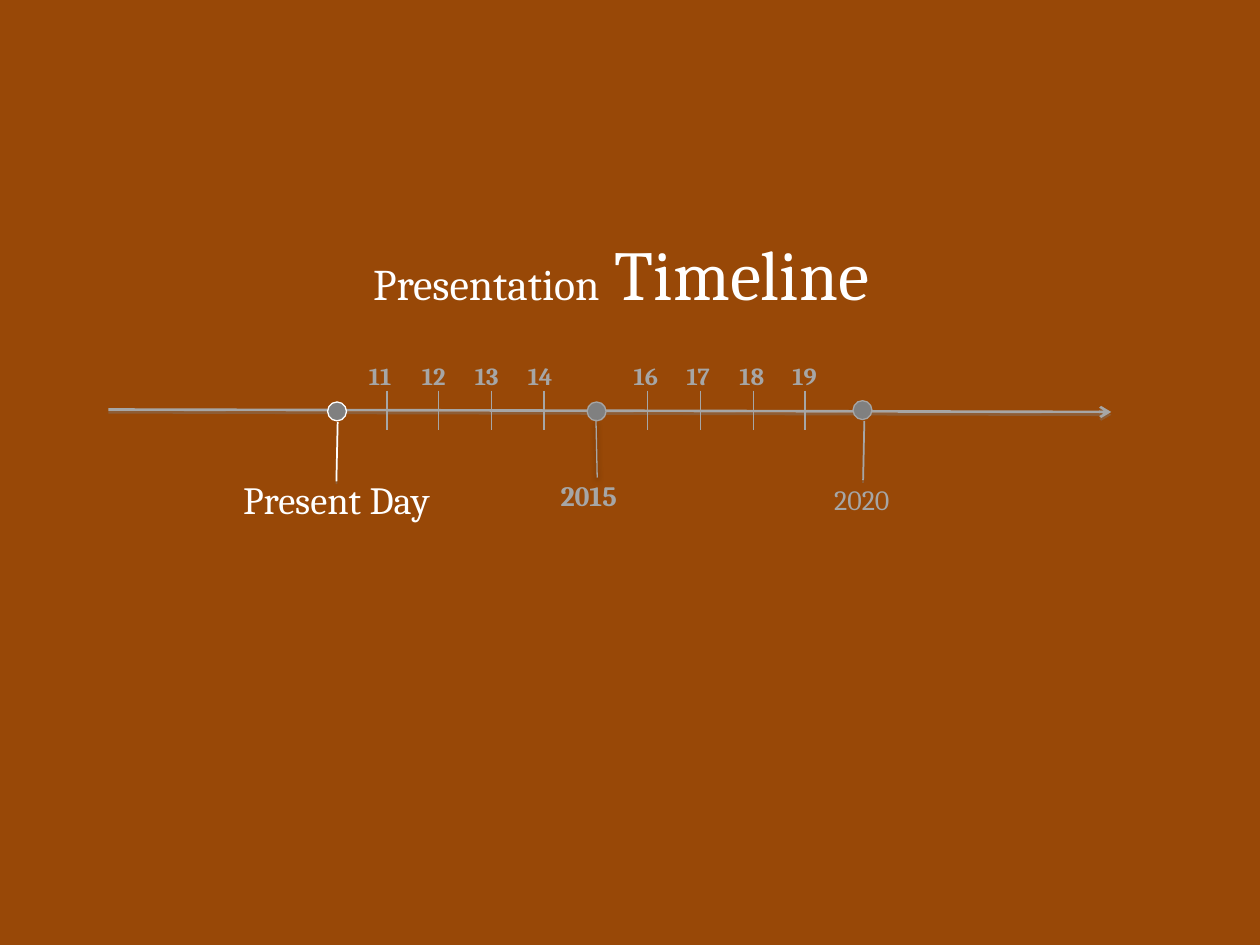
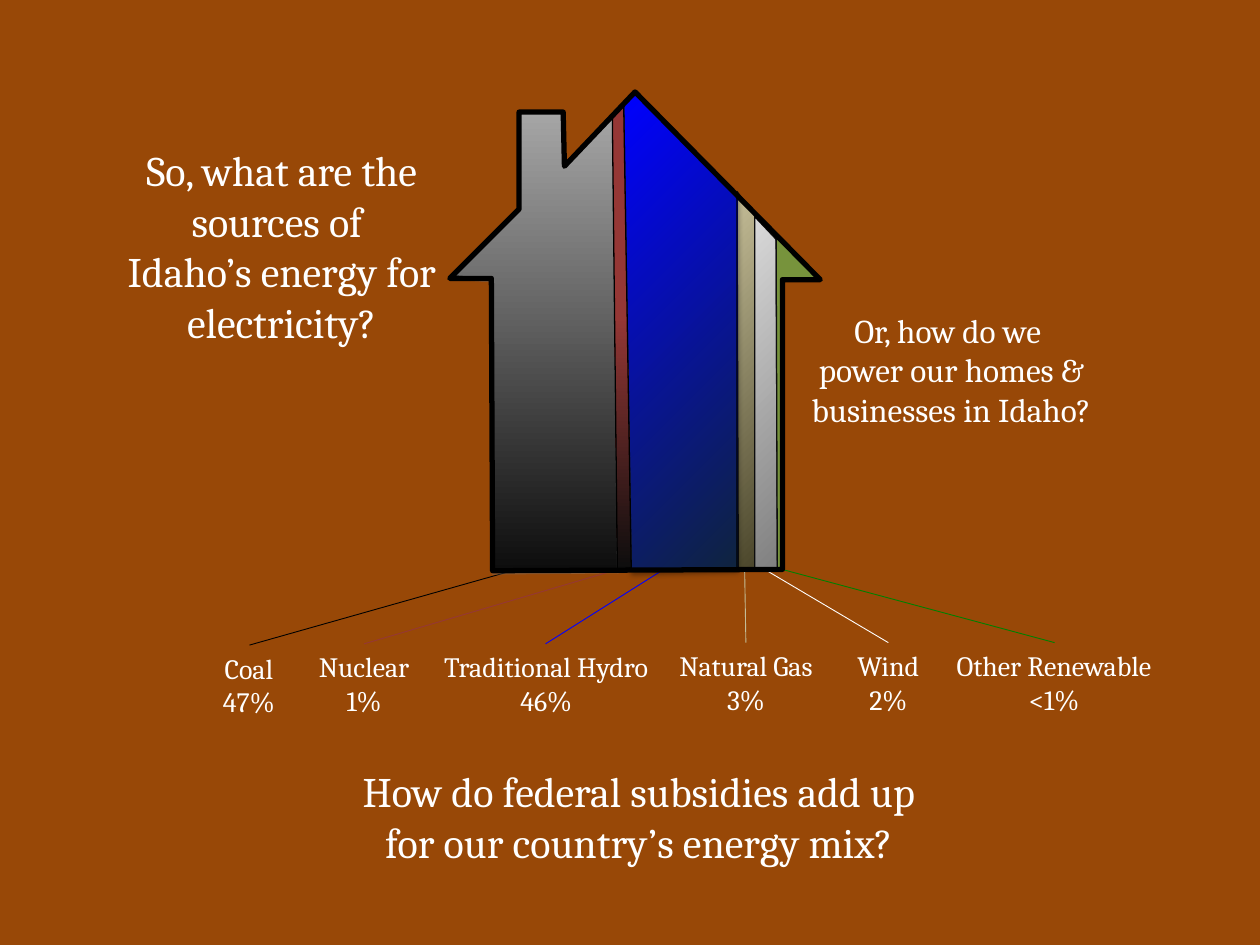
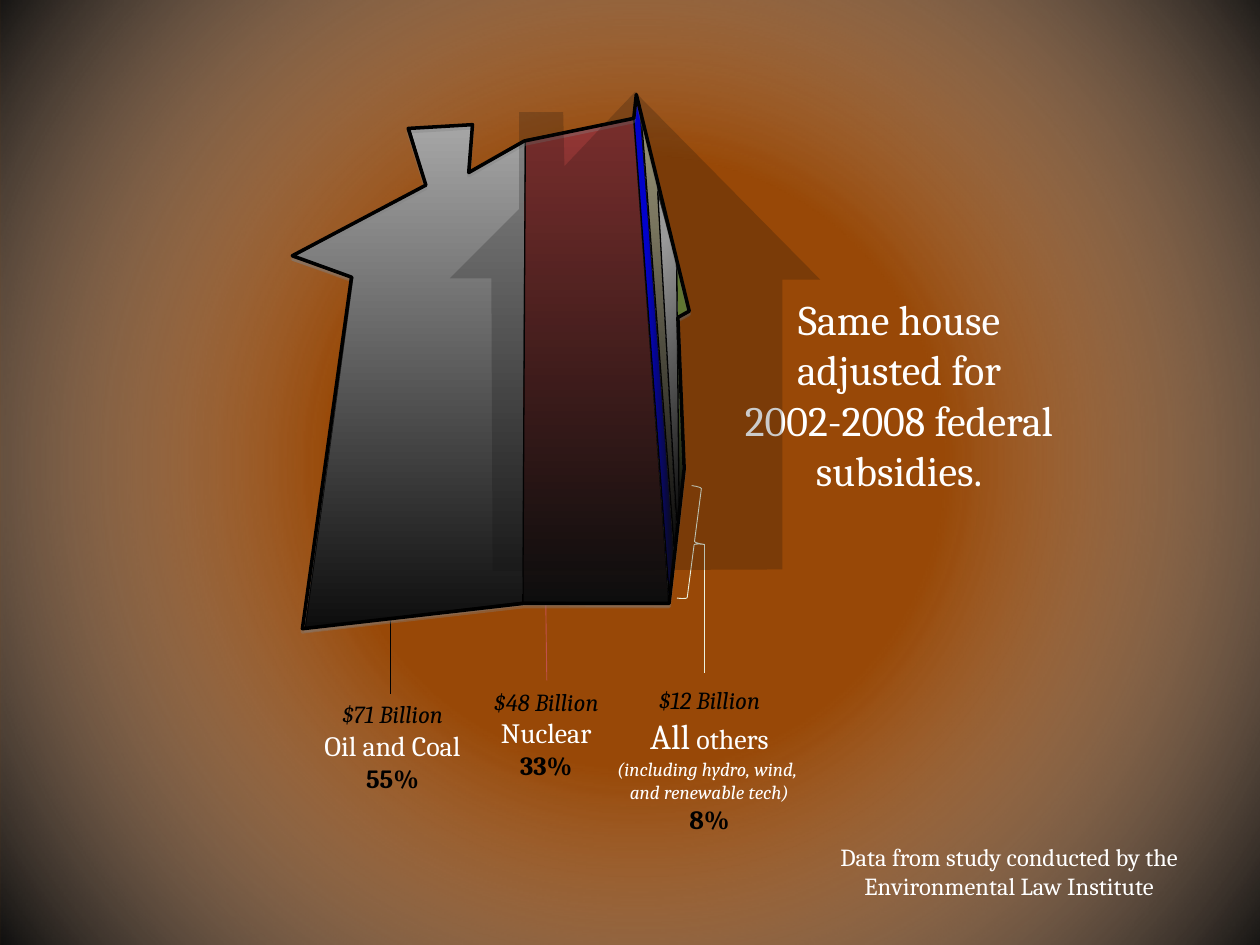
from dataclasses import dataclass
from typing import NamedTuple, Optional, Union

from lxml.etree import SubElement
from pptx import Presentation
from pptx.dml.color import RGBColor
from pptx.enum.shapes import MSO_CONNECTOR, MSO_SHAPE as SHAPE
from pptx.enum.text import MSO_ANCHOR, MSO_AUTO_SIZE, PP_ALIGN as ALIGN
from pptx.oxml.ns import qn
from pptx.util import Pt

PX = 9144  # EMU per px, 100 px to the inch
TITLE_ONLY = 5
FONT = "Cambria"

RUST, WHITE, BLACK, INK = "984807", "FFFFFF", "000000", "0D0D0D"
SILVER, GREY = "A6A6A6", "808080"
MAROON, BLUE, SAND, GREEN, PALE = "953735", "0000FF", "C4BD97", "77933C", "EBF1DE"

Box = tuple[int, int, int, int]
Points = list[tuple[int, int]]
Ends = tuple[int, int, int, int]


class Run(NamedTuple):
    text: str
    size: int
    color: str = WHITE
    bold: bool = False
    italic: bool = False


class Stop(NamedTuple):
    pos: int
    color: str
    alpha: int = 100


class Gradient(NamedTuple):
    """Linear with an angle, or circular around focus (left, top, right, bottom in percent)."""
    stops: tuple[Stop, ...]
    angle: int = 0
    focus: Optional[Box] = None


class Shadow(NamedTuple):
    color: str
    alpha: int
    blur: float
    dist: float


Fill = Union[str, Gradient, None]
Para = Union[str, tuple[Run, ...]]

HARD = Shadow(GREY, 35, 0, 1.8)
SOFT = Shadow(BLACK, 35, 3.1, 1.8)
LINE_HARD = Shadow(GREY, 38, 0, 1.6)
LINE_SOFT = Shadow(BLACK, 38, 3.1, 1.6)
CORNER = (100, 100, 0, 0)
CENTER = (50, 50, 50, 50)


def fade(*colors: str, hold: int = 0, angle: int = 90, focus: Optional[Box] = None) -> Gradient:
    """Two-colour gradient; hold keeps the first colour up to that percentage."""
    first, last = colors
    stops = [Stop(0, first), Stop(100, last)]
    if hold:
        stops.insert(1, Stop(hold, first))
    return Gradient(tuple(stops), angle, focus)


@dataclass
class Slice:
    points: Points
    fill: Fill
    shadow: Optional[Shadow] = HARD
    line: str = BLACK


@dataclass
class Milestone:
    label: str
    box: Box
    dot: tuple[int, int]
    stem: Ends
    size: int = 16
    color: str = SILVER
    bold: bool = False
    align: ALIGN = ALIGN.CENTER
    stem_width: float = 1
    shadow: Shadow = LINE_HARD


@dataclass
class Source:
    lines: tuple[Para, ...]
    box: Box
    leader: Ends
    leader_color: str
    slice: Optional[Slice] = None


def rgb(color: str) -> RGBColor:
    return RGBColor.from_string(color)


def px(*values: int) -> list[int]:
    return [v * PX for v in values]


def add_color(parent, color: str, alpha: int) -> None:
    clr = SubElement(parent, qn("a:srgbClr"), val=color)
    if alpha < 100:
        SubElement(clr, qn("a:alpha"), val=str(alpha * 1000))


def set_fill(sp, fill: Fill, alpha: int = 100) -> None:
    if fill is None:
        sp.fill.background()
    elif isinstance(fill, str):
        sp.fill.solid()
        sp.fill.fore_color.rgb = rgb(fill)
        if alpha < 100:
            clr = sp.element.spPr.find(qn("a:solidFill"))[0]
            SubElement(clr, qn("a:alpha"), val=str(alpha * 1000))
    else:
        sp.fill.gradient()
        grad = sp.element.spPr.find(qn("a:gradFill"))
        grad.clear()
        grad.set("rotWithShape", "1")
        stops = SubElement(grad, qn("a:gsLst"))
        for stop in fill.stops:
            gs = SubElement(stops, qn("a:gs"), pos=str(stop.pos * 1000))
            add_color(gs, stop.color, stop.alpha)
        if fill.focus:
            circle = SubElement(grad, qn("a:path"), path="circle")
            sides = {side: str(v * 1000) for side, v in zip("ltrb", fill.focus)}
            SubElement(circle, qn("a:fillToRect"), **sides)
        else:
            SubElement(grad, qn("a:lin"), ang=str(fill.angle * 60000), scaled="0")


def set_shadow(effects, shadow: Optional[Shadow]) -> None:
    if shadow:
        outer = SubElement(effects, qn("a:outerShdw"), blurRad=str(Pt(shadow.blur)),
                           dist=str(Pt(shadow.dist)), dir="5400000", rotWithShape="0")
        add_color(outer, shadow.color, shadow.alpha)


def style(sp, fill: Fill = None, line: Optional[str] = None, width: float = 0.75,
          shadow: Optional[Shadow] = None, alpha: int = 100) -> None:
    set_fill(sp, fill, alpha)
    if line:
        sp.line.color.rgb = rgb(line)
        sp.line.width = Pt(width)
    else:
        sp.line.fill.background()
    sp.shadow.inherit = False
    set_shadow(sp.element.spPr.find(qn("a:effectLst")), shadow)


def add_preset(slide, kind: SHAPE, box: Box, **look):
    sp = slide.shapes.add_shape(kind, *px(*box))
    style(sp, **look)
    return sp


def add_outline(slide, points: Points, **look) -> None:
    builder = slide.shapes.build_freeform(*points[0], scale=PX)
    builder.add_line_segments(points[1:], close=True)
    style(builder.convert_to_shape(), **look)


def add_slice(slide, part: Slice) -> None:
    add_outline(slide, part.points, fill=part.fill, line=part.line, shadow=part.shadow)


def add_line(slide, ends: Ends, color: str, width: float = 0.5,
             shadow: Optional[Shadow] = None, arrow: bool = False) -> None:
    line = slide.shapes.add_connector(MSO_CONNECTOR.STRAIGHT, *px(*ends))
    line.line.color.rgb = rgb(color)
    line.line.width = Pt(width)
    spPr = line.element.spPr
    if arrow:
        SubElement(spPr.find(qn("a:ln")), qn("a:tailEnd"), type="arrow")
    set_shadow(SubElement(spPr, qn("a:effectLst")), shadow)


def write(sp, *paras: Para, size: int = 16, color: str = WHITE, bold: bool = False,
          align: ALIGN = ALIGN.CENTER, wrap: bool = True) -> None:
    tf = sp.text_frame
    tf.word_wrap = wrap
    tf.auto_size = MSO_AUTO_SIZE.SHAPE_TO_FIT_TEXT
    tf.vertical_anchor = MSO_ANCHOR.TOP
    for i, para in enumerate(paras):
        p = tf.add_paragraph() if i else tf.paragraphs[0]
        p.alignment = align
        for run in (Run(para, size, color, bold),) if isinstance(para, str) else para:
            r = p.add_run()
            r.text = run.text
            r.font.name = FONT
            r.font.size = Pt(run.size)
            r.font.bold = run.bold
            r.font.italic = run.italic
            r.font.color.rgb = rgb(run.color)


def add_text(slide, box: Box, *paras: Para, **look) -> None:
    write(slide.shapes.add_textbox(*px(*box)), *paras, **look)


def add_title(slide, box: Box, *paras: Para, **look) -> None:
    """Fill the title placeholder and bring it in front of what is drawn so far."""
    sp = slide.shapes.title
    sp.left, sp.top, sp.width, sp.height = px(*box)
    write(sp, *paras, **look)
    sp.element.getparent().append(sp.element)


def add_source(slide, source: Source) -> None:
    add_text(slide, source.box, *source.lines, wrap=False)
    add_line(slide, source.leader, source.leader_color)
    if source.slice:
        add_slice(slide, source.slice)


def amount(text: str) -> tuple[Run, ...]:
    return (Run(text, 14, BLACK, italic=True),)


def share(text: str) -> tuple[Run, ...]:
    return (Run(text, 15, BLACK, bold=True),)


def aside(text: str) -> tuple[Run, ...]:
    return (Run(text, 11, italic=True),)


HOUSE = [(504, 73), (448, 132), (447, 89), (412, 89), (412, 166), (357, 221), (390, 221),
         (391, 453), (621, 452), (621, 222), (651, 222)]

MILESTONES = [
    Milestone("Present Day", (177, 373, 180, 47), (260, 319), (268, 335, 267, 382),
              size=22, color=WHITE),
    Milestone("2015", (435, 375, 88, 37), (466, 319), (473, 333, 474, 379), bold=True,
              align=ALIGN.LEFT, stem_width=0.75, shadow=LINE_SOFT),
    Milestone("2020", (610, 378, 148, 37), (677, 318), (686, 334, 685, 381)),
]

ENERGY_MIX = [
    Source(("Natural Gas", "3%"), (526, 510, 132, 64), (591, 452, 592, 510), SAND,
           Slice([(585, 152), (586, 453), (601, 453), (601, 174)],
                 fade("4A452A", SAND, focus=CORNER), None, INK)),
    Source(("Wind", "2%"), (669, 510, 72, 64), (607, 452, 705, 510), WHITE,
           Slice([(599, 451), (617, 452), (616, 190), (599, 172)],
                 fade(GREY, "D9D9D9", focus=CORNER), None, INK)),
    Source(("Other Renewable", "<1%"), (744, 510, 185, 64), (621, 452, 837, 510), "008000",
           Slice([(616, 186), (617, 452), (621, 452), (621, 222), (650, 222)],
                 GREEN, None, INK)),
    Source(("Traditional Hydro", "46%"), (338, 511, 191, 64), (533, 448, 433, 511), BLUE,
           Slice([(495, 82), (501, 453), (585, 451), (585, 156), (504, 74)],
                 fade("0F243E", BLUE, focus=CORNER), SOFT)),
    Source(("Coal", "47%"), (165, 512, 65, 64), (410, 452, 198, 512), BLACK,
           Slice([(412, 89), (412, 166), (358, 219), (390, 221), (391, 453), (491, 452),
                  (487, 90), (447, 131), (447, 88)], fade(SILVER, INK))),
    Source(("Nuclear", "1%"), (241, 511, 96, 64), (490, 452, 289, 511), MAROON,
           Slice([(495, 81), (486, 92), (490, 452), (501, 451)],
                 fade(MAROON, INK, hold=46))),
]

SUBSIDIES = [
    Source((amount("$71 Billion"), "Oil and Coal", share("55%")),
           (244, 550, 135, 89), (310, 476, 310, 551), BLACK,
           Slice([(417, 112), (373, 137), (375, 99), (325, 102), (338, 147), (232, 204),
                  (280, 220), (242, 499), (415, 478)], fade(SILVER, INK))),
    Source((amount("$48 Billion"), "Nuclear", share("33%")),
           (377, 540, 113, 86), (433, 466, 434, 540), "C0504D",
           Slice([(417, 111), (415, 478), (531, 479), (503, 94)], fade(MAROON, INK))),
]

OTHERS = Source(
    (amount("$12 Billion"), (Run("All", 20), Run(" others", 16)),
     aside("(including hydro, wind, "), aside("and renewable tech)"), share("8%")),
    (477, 539, 172, 152), (559, 432, 559, 534), PALE)

THIN_SLICES = [
    Slice([(503, 93), (505, 77), (508, 87), (535, 438), (531, 471)],
          fade(BLUE, INK, hold=32, angle=0)),
    Slice([(547, 247), (537, 205), (539, 401), (543, 372), (538, 252)],
          fade(GREEN, INK, hold=32, angle=66)),
    Slice([(509, 93), (522, 145), (537, 420), (535, 434)], fade(SAND, INK, angle=83)),
    Slice([(539, 402), (537, 413), (522, 152), (537, 207)],
          fade("BFBFBF", INK, hold=16, angle=41)),
]

BENT_HOUSE = [(240, 499), (415, 479), (531, 479), (543, 372), (538, 252), (547, 247),
              (505, 75), (503, 94), (416, 112), (372, 137), (375, 99), (324, 102),
              (338, 147), (232, 203), (279, 220)]


def build_timeline(slide) -> None:
    add_title(slide, (275, 178, 436, 77), (Run("Presentation", 25), Run(" Timeline", 40)),
              wrap=False)
    add_line(slide, (86, 325, 882, 327), SILVER, 1.5, LINE_HARD, arrow=True)
    for step, year in enumerate(range(11, 20)):
        if year == 15:
            continue
        x = round(307 + 41.5 * step)
        add_line(slide, (x, 310, x, 341), SILVER, 1)
        add_text(slide, (283 + 42 * step, 282, 55, 34), str(year), size=14, color=SILVER,
                 bold=True, align=ALIGN.LEFT)
    for m in MILESTONES:
        add_preset(slide, SHAPE.OVAL, (*m.dot, 15, 15), fill=GREY, line=m.color)
        add_line(slide, m.stem, m.color, m.stem_width, m.shadow)
        add_text(slide, m.box, m.label, size=m.size, color=m.color, bold=m.bold,
                 align=m.align)


def build_energy_mix(slide) -> None:
    add_title(slide, (69, 110, 309, 172), "So, what are the sources of ",
              "Idaho’s energy for electricity?", size=24)
    add_text(slide, (629, 241, 252, 106), "Or, how do we ",
             "power our homes & businesses in Idaho?", size=19)
    add_text(slide, (180, 603, 654, 91), "How do federal subsidies add up",
             "for our country’s energy mix?", size=24)
    for source in ENERGY_MIX:
        add_source(slide, source)
    add_outline(slide, HOUSE, line=BLACK, width=3)


def build_subsidies(slide) -> None:
    vignette = Gradient((Stop(38, WHITE, 0), Stop(100, INK)), focus=CENTER)
    add_preset(slide, SHAPE.RECTANGLE, (0, -21, 1013, 776), fill=vignette, shadow=SOFT)
    add_title(slide, (574, 228, 279, 172), "Same house adjusted for",
              "2002-2008 federal subsidies.", size=24)
    for source in SUBSIDIES:
        add_source(slide, source)
    for part in THIN_SLICES:
        add_slice(slide, part)
    add_outline(slide, BENT_HOUSE, line=BLACK, width=2, shadow=HARD)
    add_source(slide, OTHERS)
    brace = add_preset(slide, SHAPE.LEFT_BRACE, (543, 386, 16, 90), line=PALE, width=0.5)
    brace.rotation = 187.4
    add_outline(slide, HOUSE, fill=INK, alpha=21)
    add_text(slide, (644, 663, 314, 57), "Data from study conducted by the",
             "Environmental Law Institute", size=14, wrap=False)


def main() -> None:
    prs = Presentation()
    prs.slide_width, prs.slide_height = px(1000, 750)
    background = prs.slide_master.background.fill
    background.solid()
    background.fore_color.rgb = rgb(RUST)
    for build in (build_timeline, build_energy_mix, build_subsidies):
        build(prs.slides.add_slide(prs.slide_layouts[TITLE_ONLY]))
    prs.save("out.pptx")


if __name__ == "__main__":
    main()
